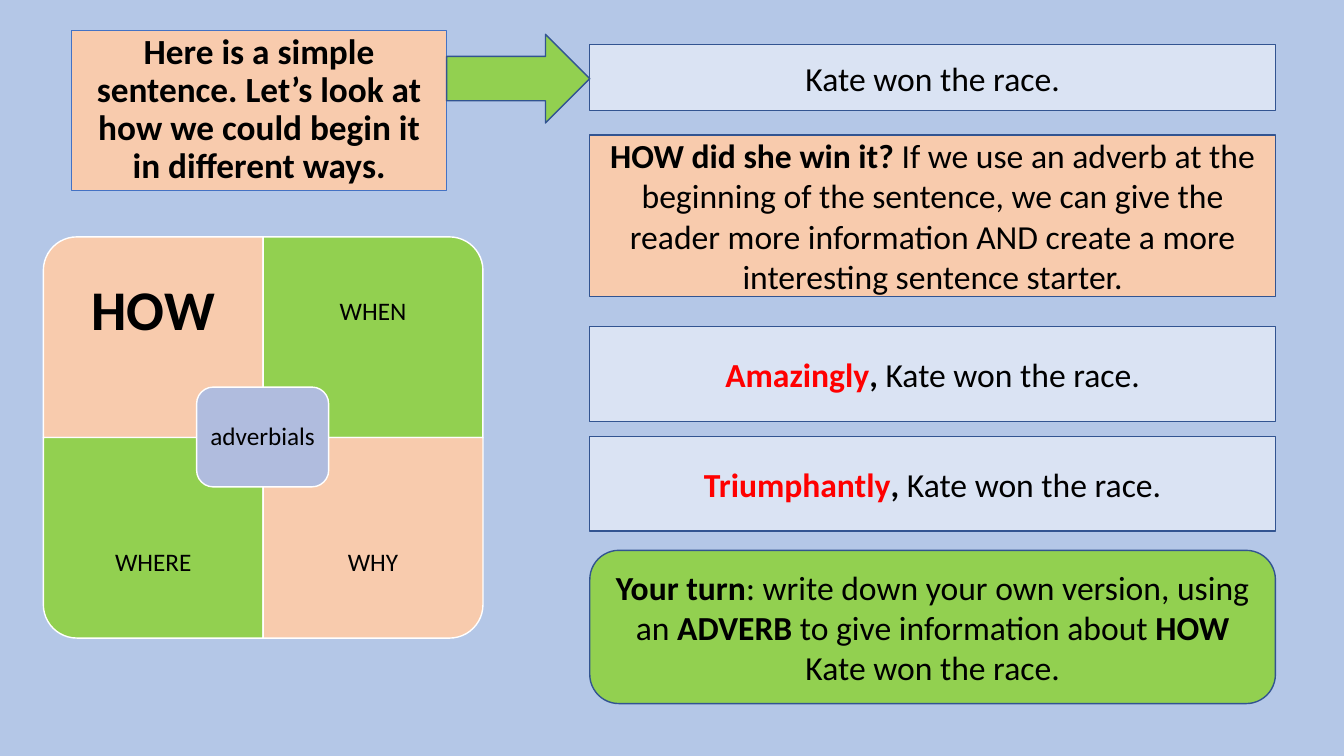
from pptx import Presentation
from pptx.dml.color import RGBColor
from pptx.enum.shapes import MSO_SHAPE
from pptx.enum.text import MSO_ANCHOR, PP_ALIGN
from pptx.util import Inches, Pt

SKY = RGBColor(0xB4, 0xC7, 0xE7)
PEACH = RGBColor(0xF8, 0xCB, 0xAD)
GREEN = RGBColor(0x92, 0xD0, 0x50)
PALE_BLUE = RGBColor(0xDA, 0xE3, 0xF3)
LAVENDER = RGBColor(0xB0, 0xBC, 0xDE)
NAVY = RGBColor(0x32, 0x54, 0x91)
BLUE = RGBColor(0x44, 0x72, 0xC4)
WHITE = RGBColor(0xFF, 0xFF, 0xFF)
BLACK = RGBColor(0, 0, 0)
RED = RGBColor(0xFF, 0, 0)

PANEL_LEFT, PANEL_WIDTH = 5.85, 6.8
GRID_LEFT, GRID_TOP = 0.43, 2.35
CELL_WIDTH, CELL_HEIGHT = 2.18, 1.99
LABEL_HEIGHT = 1.49


def add_box(slide, kind, left, top, width, height, fill, line=NAVY, weight=1):
    sp = slide.shapes.add_shape(
        kind, Inches(left), Inches(top), Inches(width), Inches(height))
    sp.shadow.inherit = False
    sp.fill.solid()
    sp.fill.fore_color.rgb = fill
    sp.line.color.rgb = line
    sp.line.width = Pt(weight)
    return sp


def write(sp, runs, size=24, spacing=None, inset=None):
    """Fill a shape with one centred paragraph of (text, bold, colour) runs."""
    tf = sp.text_frame
    tf.word_wrap = True
    tf.vertical_anchor = MSO_ANCHOR.MIDDLE
    if inset is not None:
        tf.margin_left = tf.margin_right = Inches(inset)
        tf.margin_top = tf.margin_bottom = Inches(inset)
    p = tf.paragraphs[0]
    p.alignment = PP_ALIGN.CENTER
    p.font.name = "Calibri"
    p.font.size = Pt(size)
    if spacing:
        p.line_spacing = spacing
    for text, bold, color in runs:
        r = p.add_run()
        r.text = text
        r.font.bold = bold
        r.font.color.rgb = color


def add_label(slide, text, left, top, width, height, inset, size=18, bold=False):
    sp = slide.shapes.add_textbox(
        Inches(left), Inches(top), Inches(width), Inches(height))
    write(sp, [(text, bold, BLACK)], size, 0.9, inset)


def add_quadrant(slide, col, row, rotation, fill):
    """Place a cell whose rounded corner is turned to the outside of the grid."""
    center_x = GRID_LEFT + (col + 0.5) * CELL_WIDTH
    center_y = GRID_TOP + (row + 0.5) * CELL_HEIGHT
    width, height = CELL_WIDTH, CELL_HEIGHT
    if rotation % 180:
        width, height = height, width
    sp = add_box(slide, MSO_SHAPE.ROUND_1_RECTANGLE, center_x - width / 2,
                 center_y - height / 2, width, height, fill, WHITE)
    sp.rotation = rotation


def add_adverbial_grid(slide):
    quadrants = [
        ("HOW", 0, 0, 270, PEACH, 0.31, 40, True),
        ("WHEN", 1, 0, 0, GREEN, 0.14, 18, False),
        ("WHERE", 0, 1, 180, GREEN, 0.14, 18, False),
        ("WHY", 1, 1, 90, PEACH, 0.14, 18, False),
    ]
    for text, col, row, rotation, fill, inset, size, bold in quadrants:
        add_quadrant(slide, col, row, rotation, fill)
        top = GRID_TOP + row * (2 * CELL_HEIGHT - LABEL_HEIGHT)
        add_label(slide, text, GRID_LEFT + col * CELL_WIDTH, top,
                  CELL_WIDTH, LABEL_HEIGHT, inset, size, bold)
    add_box(slide, MSO_SHAPE.ROUNDED_RECTANGLE, 1.95, 3.84, 1.31, 0.99,
            LAVENDER, WHITE)
    add_label(slide, "adverbials", 2, 3.89, 1.21, 0.9, 0.07)


def add_panel(slide, top, height, fill, runs, kind=MSO_SHAPE.RECTANGLE):
    sp = add_box(slide, kind, PANEL_LEFT, top, PANEL_WIDTH, height, fill)
    write(sp, runs)
    return sp


def main():
    prs = Presentation()
    prs.slide_width, prs.slide_height = Inches(13.33), Inches(7.5)
    slide = prs.slides.add_slide(prs.slide_layouts[6])
    slide.background.fill.solid()
    slide.background.fill.fore_color.rgb = SKY

    heading = add_box(slide, MSO_SHAPE.RECTANGLE, 0.71, 0.3, 3.72, 1.59,
                      PEACH, BLUE, 0.75)
    write(heading, [("Here is a simple sentence. Let’s look at how we could "
                     "begin it in different ways.", True, BLACK)], 25.2, 0.9)
    add_adverbial_grid(slide)

    add_panel(slide, 0.44, 0.66, PALE_BLUE, [("Kate won the race.", False, BLACK)])
    add_panel(slide, 1.34, 1.6, PEACH, [
        ("HOW did she win it? ", True, BLACK),
        ("If we use an adverb at the beginning of the sentence, we can give "
         "the reader more information AND create a more interesting sentence "
         "starter.", False, BLACK)])
    for adverb, top in (("Amazingly", 3.24), ("Triumphantly", 4.33)):
        add_panel(slide, top, 0.94, PALE_BLUE, [
            (adverb, True, RED), (",", True, BLACK),
            (" Kate won the race.", False, BLACK)])
    add_box(slide, MSO_SHAPE.RIGHT_ARROW, 4.43, 0.34, 1.42, 0.88, GREEN)
    task = add_panel(slide, 5.46, 1.52, GREEN, [
        ("Your turn", True, BLACK),
        (": write down your own version, using an ", False, BLACK),
        ("ADVERB", True, BLACK),
        (" to give information about ", False, BLACK),
        ("HOW ", True, BLACK),
        ("Kate won the race.", False, BLACK)], MSO_SHAPE.ROUNDED_RECTANGLE)
    task.adjustments[0] = 0.19

    prs.save("out.pptx")


if __name__ == "__main__":
    main()
